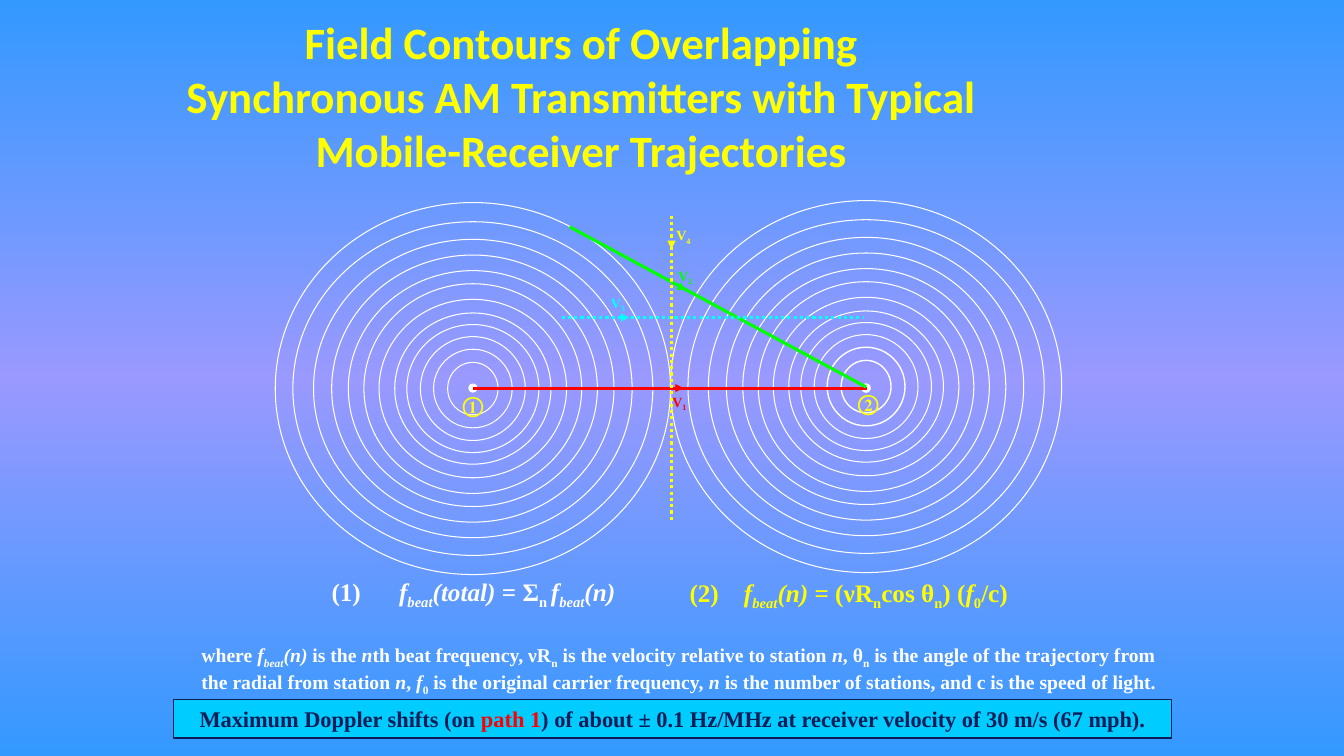
from copy import deepcopy

from pptx import Presentation, util as u
from pptx.dml.color import RGBColor
from pptx.enum import dml, shapes, text
from pptx.oxml.ns import qn
from pptx.oxml.xmlchemy import OxmlElement

WHITE = RGBColor(0xFF, 0xFF, 0xFF)
YELLOW = RGBColor(0xFF, 0xFF, 0x00)
RED = RGBColor(0xFF, 0x00, 0x00)
GREEN = RGBColor(0x00, 0xFF, 0x00)
CYAN = RGBColor(0x00, 0xFF, 0xFF)
NAVY = RGBColor(0x08, 0x1D, 0x58)
SKY = RGBColor(0x00, 0xCC, 0xFF)
BLUE = RGBColor(0x33, 0x99, 0xFF)
LILAC = RGBColor(0x99, 0x99, 0xFF)

RINGS = [(3.92, 3.69), (3.57, 3.31), (3.16, 2.96), (2.8, 2.65), (2.47, 2.34), (2.16, 2.08),
         (1.86, 1.77), (1.55, 1.5), (1.31, 1.27), (1.04, 1.03), (0.78, 0.78), (0.5, 0.52)]

TRAJECTORIES = [
    ("1", RED, False, (1.96, 1.86, 5.87, 1.86), (3.95, 1.86, 4.05, 1.86), (3.84, 1.86)),
    ("2", GREEN, False, (2.92, 0.26, 5.86, 1.85), (3.94, 0.81, 4.07, 0.89), (3.9, 0.61)),
    ("3", CYAN, True, (2.84, 1.16, 5.83, 1.16), (3.44, 1.16, 3.51, 1.16), (3.23, 0.88)),
    ("4", YELLOW, True, (3.93, 0.15, 3.93, 3.19), (3.93, 0.4, 3.93, 0.48), (3.88, 0.21)),
]

BEAT_N = [("f", "i"), ("beat", "is"), ("(n)", "i")]
TOTAL = [("(1)", ""), ("\tf", "i"), ("beat", "is"), ("(total)", "i"), (" = Σ", ""),
         ("n ", "s"), *BEAT_N]
PER_STATION = [("(2)", ""), ("\tf", "i"), *BEAT_N[1:], (" = (νR", ""), ("n", "s"),
               ("cos θ", ""), ("n", "s"), (") (", ""), ("f", "i"), ("0", "s"), ("/c)", "")]
DEFINITIONS = [
    ("where ", ""), *BEAT_N, (" is the ", ""), ("n", "i"), ("th beat frequency, νR", ""),
    ("n", "s"), (" is the velocity relative to station ", ""), ("n", "i"), (", θ", ""),
    ("n", "s"), (" is the angle of the trajectory from the radial from station ", ""),
    ("n", "i"), (", ", ""), ("f", "i"), ("0", "s"),
    (" is the original carrier frequency, ", ""), ("n", "i"),
    (" is the number of stations, and c is the speed of light.", "")]
DOPPLER = [("Maximum Doppler shifts (on ", ""), ("path 1", "r"),
           (") of about ± 0.1 Hz/MHz at receiver velocity of 30 m/s (67 mph).", "")]


def inches(lengths):
    """Convert a sequence of inch values."""
    return [u.Inches(length) for length in lengths]


def paint_background(slide):
    """Fill the slide with a blue-lilac-blue vertical gradient."""
    fill = slide.background.fill
    fill.gradient()
    fill.gradient_angle = 270
    stops = next(slide._element.iter(qn("a:gsLst")))
    stops.insert(1, deepcopy(stops[0]))
    for stop, color, position in zip(fill.gradient_stops, (BLUE, LILAC, BLUE), (0, 0.5, 1)):
        stop.color.rgb = color
        stop.position = position


def write(frame, parts, size, color, align=text.PP_ALIGN.LEFT, tab=None):
    """Write styled parts: i is italic, s is subscript, r is red."""
    frame.word_wrap = True
    paragraph = frame.paragraphs[0]
    paragraph.alignment = align
    if tab:
        tabs = OxmlElement("a:tabLst")
        stop = OxmlElement("a:tab")
        stop.set("pos", str(u.Inches(tab)))
        stop.set("algn", "l")
        tabs.append(stop)
        paragraph._p.get_or_add_pPr().append(tabs)
    font = paragraph.font
    font.name, font.size, font.bold = "Times New Roman", u.Pt(size), True
    font.color.rgb = color
    for wording, style in parts:
        run = paragraph.add_run()
        run.text = wording
        if "i" in style:
            run.font.italic = True
        if "s" in style:
            run._r.get_or_add_rPr().set("baseline", "-25000")
        if "r" in style:
            run.font.color.rgb = RED


def add_note(slide, box, parts, size, color, tab=None):
    """Place a text box with styled parts."""
    write(slide.shapes.add_textbox(*inches(box)).text_frame, parts, size, color, tab=tab)


def add_title(slide, box):
    """Fill and place the title."""
    title = slide.shapes.title
    title.left, title.top, title.width, title.height = inches(box)
    frame = title.text_frame
    frame.text = ("Field Contours of Overlapping Synchronous AM Transmitters "
                  "with Typical Mobile-Receiver Trajectories")
    frame.word_wrap = True
    frame.auto_size = text.MSO_AUTO_SIZE.NONE
    frame.vertical_anchor = text.MSO_ANCHOR.TOP
    heading = frame.paragraphs[0]
    heading.alignment = text.PP_ALIGN.CENTER
    heading.space_before = u.Pt(0)
    heading.line_spacing = 1.0
    heading.font.name, heading.font.size, heading.font.bold = "Calibri", u.Pt(32), True
    heading.font.color.rgb = YELLOW


def add_ellipse(slide, center, size, weight, filled=False):
    """Draw a white ellipse around a center."""
    (x, y), (width, height) = center, size
    ellipse = slide.shapes.add_shape(
        shapes.MSO_SHAPE.OVAL, *inches((x - width / 2, y - height / 2, width, height)))
    ellipse.shadow.inherit = False
    ellipse.line.color.rgb = WHITE
    ellipse.line.width = u.Pt(weight)
    if filled:
        ellipse.fill.solid()
        ellipse.fill.fore_color.rgb = WHITE
    else:
        ellipse.fill.background()


def add_station(slide, box, number, inner_weight):
    """Draw a transmitter with its field contours filling the box."""
    left, top, width, height = box
    center = left + width / 2, top + height / 2
    outer_width, outer_height = RINGS[0]
    for index, (ring_width, ring_height) in enumerate(RINGS):
        size = width * ring_width / outer_width, height * ring_height / outer_height
        add_ellipse(slide, center, size, inner_weight if index >= 10 else 0.75)
    add_ellipse(slide, (center[0], 3.85), (0.08, 0.08), inner_weight, filled=True)
    add_note(slide, (left + 1.76, top + 1.82, 0.5, 0.37), [(number, "")], 16, YELLOW)


def add_line(slide, ends, color, weight, dotted=False, arrow=False):
    """Draw a straight line, dotted or with an arrowhead if asked."""
    line = slide.shapes.add_connector(shapes.MSO_CONNECTOR.STRAIGHT, *inches(ends))
    line.line.color.rgb = color
    line.line.width = u.Pt(weight)
    if dotted:
        line.line.dash_style = dml.MSO_LINE.ROUND_DOT
    properties = line._element.spPr
    if arrow:
        head = OxmlElement("a:tailEnd")
        head.set("type", "triangle")
        properties.find(qn("a:ln")).append(head)
    properties.append(OxmlElement("a:effectLst"))


def add_trajectories(slide, box):
    """Draw the receiver paths, their direction arrows and labels."""
    left, top = box[:2]
    origin = left, top, left, top
    for number, color, dotted, course, direction, label in TRAJECTORIES:
        add_line(slide, [a + b for a, b in zip(origin, course)], color, 2.25, dotted)
        add_line(slide, [a + b for a, b in zip(origin, direction)], color, 0.75, arrow=True)
        add_note(slide, (left + label[0], top + label[1], 0.5, 0.27),
                 [("V", ""), (number, "s")], 10, color)


def add_contour_map(slide, box):
    """Draw both stations side by side with the paths across them."""
    left, top, width, height = box
    add_station(slide, (left + width - 3.88, top, 3.88, height - 0.02), "②", 1)
    add_station(slide, (left, top + 0.02, 3.92, height - 0.02), "①", 0.75)
    add_trajectories(slide, box)


def add_formulas(slide, box):
    """Place the two equations and the explanation below them."""
    left, top, width, height = box
    add_note(slide, (left + 1.29, top, 3.53, 0.4), TOTAL, 18, WHITE, tab=0.67)
    add_note(slide, (left + 4.84, top + 0.01, 4.25, 0.4), PER_STATION, 18, YELLOW, tab=0.54)
    add_note(slide, (left, top + height - 0.57, width, 0.57), DEFINITIONS, 14, WHITE)


def add_conclusion(slide, box):
    """Place the highlighted conclusion bar."""
    bar = slide.shapes.add_shape(shapes.MSO_SHAPE.RECTANGLE, *inches(box))
    bar.shadow.inherit = False
    bar.fill.solid()
    bar.fill.fore_color.rgb = SKY
    bar.line.color.rgb = NAVY
    bar.line.width = u.Pt(1)
    write(bar.text_frame, DOPPLER, 16, NAVY, text.PP_ALIGN.CENTER)


def main():
    """Build and save the slide."""
    deck = Presentation()
    deck.slide_width, deck.slide_height = inches((13.33, 7.5))
    slide = deck.slides.add_slide(deck.slide_layouts[5])
    paint_background(slide)
    add_title(slide, (1.72, 0.1, 8.09, 1.72))
    add_contour_map(slide, (2.73, 1.99, 7.8, 3.71))
    add_formulas(slide, (1.9, 5.67, 9.76, 1.23))
    add_conclusion(slide, (1.72, 6.94, 9.9, 0.38))
    deck.save("out.pptx")


if __name__ == "__main__":
    main()
